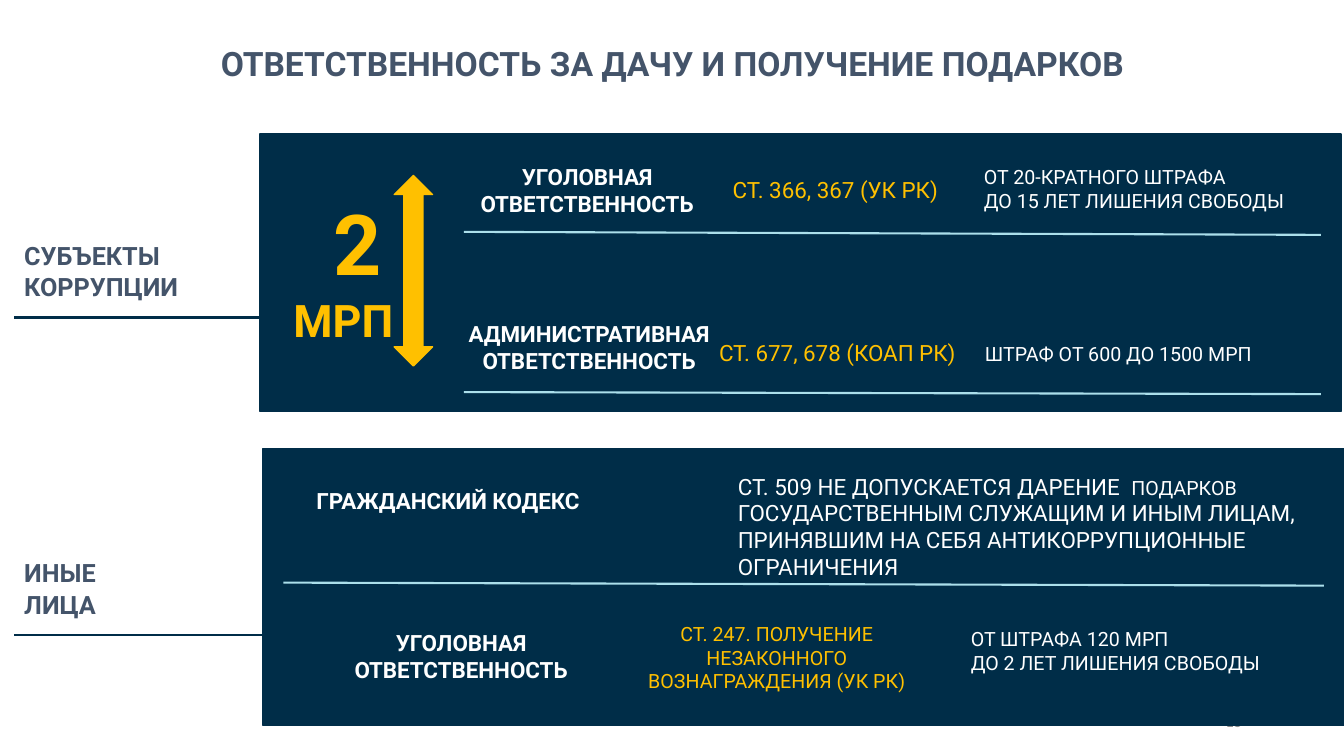
from lxml.etree import SubElement
from pptx import Presentation
from pptx.dml.color import RGBColor
from pptx.enum.shapes import MSO_CONNECTOR, MSO_SHAPE
from pptx.enum.text import MSO_ANCHOR, MSO_AUTO_SIZE, PP_ALIGN
from pptx.oxml.ns import qn
from pptx.util import Inches, Pt

COLORS = {
    "navy": "002D48",
    "slate": "44546A",
    "gold": "FFC000",
    "ice": "ABDFEB",
    "white": "FFFFFF",
    "gray": "8C8C8C",
}
LEFT, CENTER, RIGHT = PP_ALIGN.LEFT, PP_ALIGN.CENTER, PP_ALIGN.RIGHT


def write(shape, text, size=16, color="white", bold=False, align=LEFT,
          font="Roboto", anchor=MSO_ANCHOR.TOP, before=0):
    """Fill a shape; text is a string or a list of paragraphs of (text, size) runs."""
    frame = shape.text_frame
    frame.word_wrap = True
    frame.auto_size = MSO_AUTO_SIZE.NONE
    frame.vertical_anchor = anchor
    if isinstance(text, str):
        text = [[(line, size)] for line in text.split("\n")]
    for index, runs in enumerate(text):
        paragraph = frame.add_paragraph() if index else frame.paragraphs[0]
        paragraph.alignment = align
        paragraph.space_before = Pt(before)
        for words, run_size in runs:
            run = paragraph.add_run()
            run.text = words
            run.font.name = font
            run.font.size = Pt(run_size)
            run.font.bold = bold
            run.font.color.rgb = RGBColor.from_string(COLORS[color])


def add_line(x1, y1, x2, y2, color):
    line = slide.shapes.add_connector(
        MSO_CONNECTOR.STRAIGHT, Inches(x1), Inches(y1), Inches(x2), Inches(y2))
    line.line.color.rgb = RGBColor.from_string(COLORS[color])
    line.line.width = Pt(1.5)
    SubElement(line._element.spPr, qn("a:effectLst"))


presentation = Presentation()
presentation.slide_width = Inches(13.33)
presentation.slide_height = Inches(7.5)
slide = presentation.slides.add_slide(presentation.slide_layouts[4])
placeholders = {item.placeholder_format.idx: item for item in slide.placeholders}
for unused in (2, 4):
    element = placeholders[unused]._element
    element.getparent().remove(element)

# Title
title = slide.shapes.title
title.left, title.top, title.width, title.height = map(Inches, (1.31, 0.42, 10.72, 0.41))
frame = title.text_frame
frame.margin_left = frame.margin_right = frame.margin_bottom = 0
frame.margin_top = Inches(0.01)
write(title, "ОТВЕТСТВЕННОСТЬ ЗА ДАЧУ И ПОЛУЧЕНИЕ ПОДАРКОВ", size=24, color="slate",
      bold=True, align=CENTER, anchor=MSO_ANCHOR.MIDDLE, before=0.7)

# Page number, mostly behind the lower panel
number = slide.shapes.add_textbox(Inches(9.42), Inches(6.95), Inches(3), Inches(0.4))
write(number, "15", size=12, color="gray", align=RIGHT, font="Calibri",
      anchor=MSO_ANCHOR.MIDDLE)

# Groups of persons: label, underline and panel
for index, label, label_top, panel_left, panel_top in (
    (1, "СУБЪЕКТЫ\nКОРРУПЦИИ", 2.33, 2.58, 1.33),
    (3, "ИНЫЕ\nЛИЦА", 5.48, 2.61, 4.45),
):
    body = placeholders[index]
    body.left, body.top, body.width, body.height = map(
        Inches, (0.14, label_top, 1.94, 0.82))
    write(body, label, size=18, color="slate", bold=True, before=1)
    add_line(2.61, label_top + 0.82, 0.14, label_top + 0.82, "navy")
    panel = slide.shapes.add_shape(MSO_SHAPE.RECTANGLE, Inches(panel_left),
                                   Inches(panel_top), Inches(10.72), Inches(2.75))
    panel.shadow.inherit = False
    panel.fill.solid()
    panel.fill.fore_color.rgb = RGBColor.from_string(COLORS["navy"])
    panel.line.color.rgb = RGBColor.from_string(COLORS["navy"])
    panel.line.width = Pt(1)

# Threshold with its double arrow
threshold = slide.shapes.add_textbox(Inches(2.44), Inches(1.85), Inches(1.56), Inches(1.65))
write(threshold, [[("2", 60), (" ", 32)], [("МРП", 32)]], color="gold", bold=True,
      align=RIGHT)
arrow = slide.shapes.add_shape(MSO_SHAPE.UP_DOWN_ARROW, Inches(3.91), Inches(1.74),
                               Inches(0.38), Inches(1.89))
arrow.shadow.inherit = False
arrow.fill.solid()
arrow.fill.fore_color.rgb = RGBColor.from_string(COLORS["gold"])
arrow.line.color.rgb = RGBColor.from_string(COLORS["gold"])
arrow.line.width = Pt(1)
slide.shapes.add_group_shape([threshold, arrow])

# Row dividers
for x1, y1, x2, y2 in (
    (13.1, 2.33, 4.6, 2.3),
    (13.1, 3.91, 4.6, 3.89),
    (13.13, 5.81, 2.81, 5.78),
):
    add_line(x1, y1, x2, y2, "ice")

# Cells of the panels: kind of liability, article, penalty
kind = {"bold": True, "align": CENTER}
article = {"color": "gold", "align": CENTER}
penalty = {"size": 14}
civil_rule = [[
    ("СТ. 509 НЕ ДОПУСКАЕТСЯ ДАРЕНИЕ  ", 16),
    ("ПОДАРКОВ ", 14),
    ("ГОСУДАРСТВЕННЫМ СЛУЖАЩИМ И ИНЫМ ЛИЦАМ, "
     "ПРИНЯВШИМ НА СЕБЯ АНТИКОРРУПЦИОННЫЕ ОГРАНИЧЕНИЯ", 16),
]]
for left, top, width, height, text, style in (
    (4.26, 1.57, 3.13, 0.64, "УГОЛОВНАЯ ОТВЕТСТВЕННОСТЬ", kind),
    (6.72, 1.7, 3.13, 0.37, "СТ. 366, 367 (УК РК)", article),
    (9.66, 1.59, 3.42, 0.57, "ОТ 20-КРАТНОГО ШТРАФА\nДО 15 ЛЕТ ЛИШЕНИЯ СВОБОДЫ", penalty),
    (4.28, 3.13, 3.13, 0.64, "АДМИНИСТРАТИВНАЯ ОТВЕТСТВЕННОСТЬ", kind),
    (6.74, 3.32, 3.13, 0.37, "СТ. 677, 678 (КОАП РК)", article),
    (9.67, 3.34, 3.42, 0.34, "ШТРАФ ОТ 600 ДО 1500 МРП", penalty),
    (3.04, 4.78, 2.81, 0.64, "ГРАЖДАНСКИЙ КОДЕКС", kind),
    (7.22, 4.64, 5.74, 1.18, civil_rule, {}),
    (2.91, 6.19, 3.33, 0.64, "УГОЛОВНАЯ ОТВЕТСТВЕННОСТЬ", kind),
    (6.14, 6.12, 3.13, 0.81, "СТ. 247. ПОЛУЧЕНИЕ НЕЗАКОННОГО ВОЗНАГРАЖДЕНИЯ (УК РК)",
     {**article, "size": 14}),
    (9.53, 6.17, 3.42, 0.57, "ОТ ШТРАФА 120 МРП\nДО 2 ЛЕТ ЛИШЕНИЯ СВОБОДЫ", penalty),
):
    cell = slide.shapes.add_textbox(Inches(left), Inches(top), Inches(width), Inches(height))
    write(cell, text, **style)

presentation.save("out.pptx")
